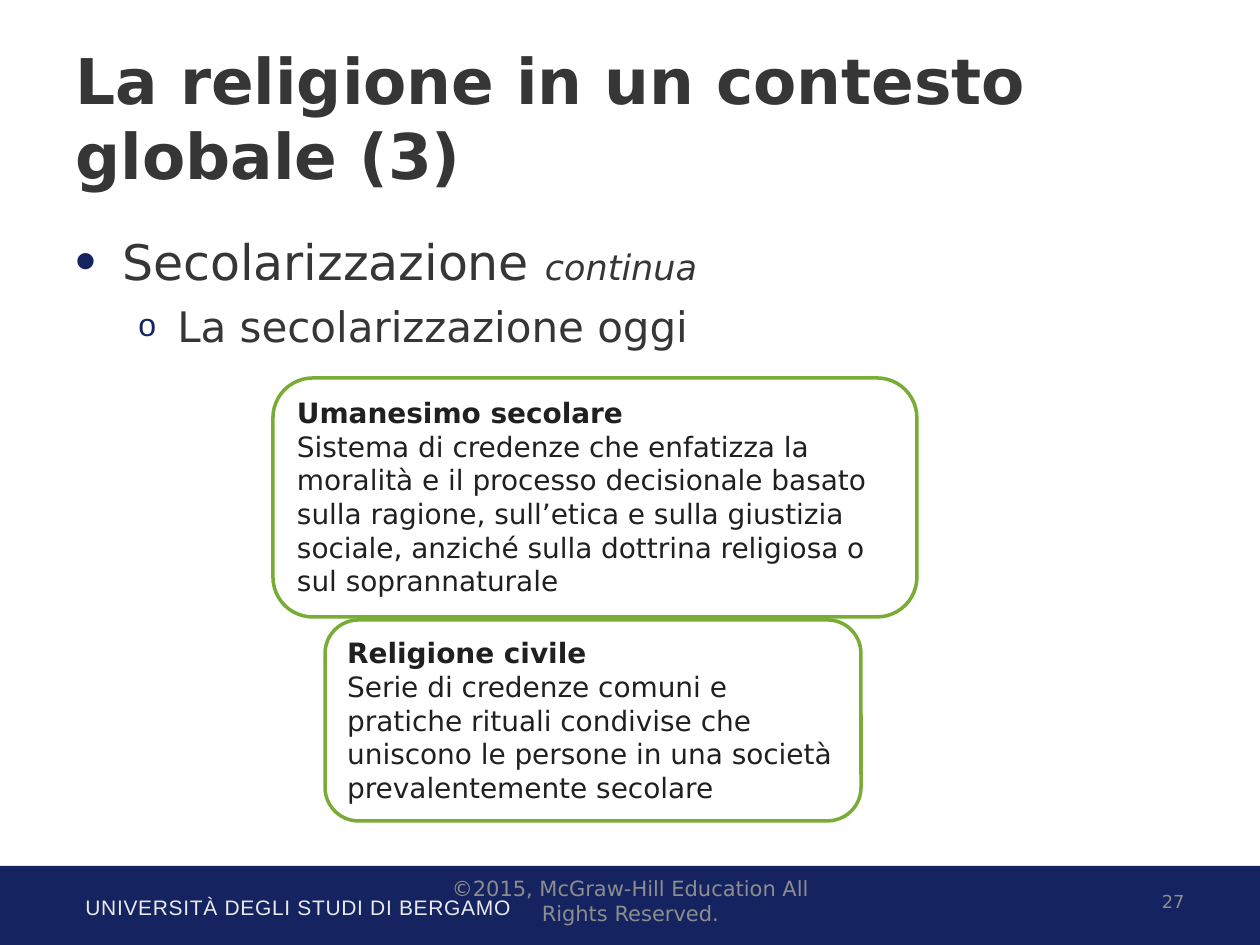
from lxml import etree
from pptx import Presentation
from pptx.dml.color import RGBColor
from pptx.enum.shapes import MSO_SHAPE
from pptx.enum.text import MSO_ANCHOR, MSO_AUTO_SIZE, PP_ALIGN
from pptx.oxml.ns import qn
from pptx.util import Emu, Pt

RECTANGLE, ROUNDED = MSO_SHAPE.RECTANGLE, MSO_SHAPE.ROUNDED_RECTANGLE
TOP, MIDDLE = MSO_ANCHOR.TOP, MSO_ANCHOR.MIDDLE
LEFT, CENTER, RIGHT = PP_ALIGN.LEFT, PP_ALIGN.CENTER, PP_ALIGN.RIGHT

NAVY = RGBColor(0x15, 0x24, 0x60)
GREEN = RGBColor(0x78, 0xAC, 0x35)
WHITE = RGBColor(0xFF, 0xFF, 0xFF)
CHARCOAL = RGBColor(0x36, 0x36, 0x36)
INK = RGBColor(0x20, 0x20, 0x20)
GRAY = RGBColor(0x8D, 0x8D, 0x8D)
PALE = RGBColor(0xE9, 0xE9, 0xE9)

FONT = "DejaVu Sans"
EMU_PER_PX = 914400 / 126
PAGE_WIDTH, PAGE_HEIGHT = 1260, 945

TITLE = {"size": Pt(36), "bold": True, "color": CHARCOAL}
TOPIC = {"size": Pt(28), "color": CHARCOAL}
ASIDE = {"size": Pt(20), "italic": True, "color": CHARCOAL}
SUBTOPIC = {"size": Pt(24), "color": CHARCOAL}
TERM = {"size": Pt(16), "bold": True, "color": INK}
MEANING = {"size": Pt(16), "bold": False, "color": INK}
UNIVERSITY = {"size": Pt(12), "name": "Arial", "color": PALE}
COPYRIGHT = {"size": Pt(12), "color": GRAY}
PAGE_NUMBER = {"size": Pt(10.2), "color": GRAY}

DEFINITIONS = [
    ((273, 378, 644, 239), "Umanesimo secolare",
     "Sistema di credenze che enfatizza la moralità e il processo decisionale "
     "basato sulla ragione, sull’etica e sulla giustizia sociale, anziché sulla "
     "dottrina religiosa o sul soprannaturale"),
    ((325, 620, 536, 201), "Religione civile",
     "Serie di credenze comuni e pratiche rituali condivise che uniscono le "
     "persone in una società prevalentemente secolare"),
]


def px(value):
    return Emu(round(value * EMU_PER_PX))


def add_span(para, text, style):
    span = para.add_run()
    span.text = text
    for key, value in {"name": FONT, **style}.items():
        if key == "color":
            span.font.color.rgb = value
        else:
            setattr(span.font, key, value)
    return span


def set_frame(frame, anchor=TOP):
    frame.word_wrap = True
    frame.auto_size = MSO_AUTO_SIZE.NONE
    frame.vertical_anchor = anchor


def add_text(page, place, anchor=TOP):
    box = page.shapes.add_textbox(*map(px, place))
    set_frame(box.text_frame, anchor)
    return box.text_frame


def add_label(page, place, text, style, align=LEFT, anchor=MIDDLE):
    para = add_text(page, place, anchor).paragraphs[0]
    para.alignment = align
    return add_span(para, text, style)


def add_panel(page, kind, place, fill):
    panel = page.shapes.add_shape(kind, *map(px, place))
    panel.shadow.inherit = False
    panel.fill.solid()
    panel.fill.fore_color.rgb = fill
    panel.line.fill.background()
    return panel


def set_bullet(para, mark, percent, margin, hanging):
    properties = para._p.get_or_add_pPr()
    properties.set("marL", str(px(margin)))
    properties.set("indent", str(-px(hanging)))
    color = etree.SubElement(properties, qn("a:buClr"))
    etree.SubElement(color, qn("a:srgbClr"), val=str(NAVY))
    etree.SubElement(properties, qn("a:buSzPct"), val=str(percent * 1000))
    etree.SubElement(properties, qn("a:buFont"), typeface="Arial")
    etree.SubElement(properties, qn("a:buChar"), char=mark)


def add_title(page, place, text):
    title = page.shapes.title
    title.left, title.top, title.width, title.height = map(px, place)
    set_frame(title.text_frame, MIDDLE)
    para = title.text_frame.paragraphs[0]
    para.alignment = LEFT
    add_span(para, text, TITLE)


def add_outline(page):
    frame = add_text(page, (63, 221, 1134, 624))
    frame.margin_top = px(10)
    topic = frame.paragraphs[0]
    set_bullet(topic, "•", 122, 47, 47)
    add_span(topic, "Secolarizzazione ", TOPIC)
    add_span(topic, "continua", ASIDE)
    subtopic = frame.add_paragraph()
    subtopic.level = 1
    set_bullet(subtopic, "o", 76, 102, 39)
    subtopic.space_before = Pt(6)
    add_span(subtopic, "La secolarizzazione oggi", SUBTOPIC)


def add_definition(page, place, term, meaning):
    panel = add_panel(page, ROUNDED, place, WHITE)
    panel.line.color.rgb = GREEN
    panel.line.width = Pt(2)
    frame = panel.text_frame
    set_frame(frame)
    paras = [frame.paragraphs[0], frame.add_paragraph()]
    for para, text, style in zip(paras, (term, meaning), (TERM, MEANING)):
        para.alignment = LEFT
        add_span(para, text, style)


def add_footer(page):
    add_panel(page, RECTANGLE, (0, 866, PAGE_WIDTH, PAGE_HEIGHT - 866), NAVY)
    name = add_label(page, (73, 888, 733, 38), "UNIVERSITÀ DEGLI STUDI DI BERGAMO",
                     UNIVERSITY, anchor=TOP)
    # Slightly open letter spacing
    name.font._element.set("spc", "40")
    add_label(page, (903, 876, 294, 50), "27", PAGE_NUMBER, RIGHT)
    add_label(page, (431, 876, 399, 50),
              "©2015, McGraw-Hill Education All Rights Reserved.", COPYRIGHT, CENTER)


def main():
    deck = Presentation()
    deck.slide_width, deck.slide_height = px(PAGE_WIDTH), px(PAGE_HEIGHT)
    page = deck.slides.add_slide(deck.slide_layouts[5])

    # Heading and outline
    add_title(page, (63, 38, 1134, 158), "La religione in un contesto globale (3)")
    add_outline(page)

    # Definition panels
    for place, term, meaning in DEFINITIONS:
        add_definition(page, place, term, meaning)

    # Footer band
    add_footer(page)
    deck.save("out.pptx")


if __name__ == "__main__":
    main()
